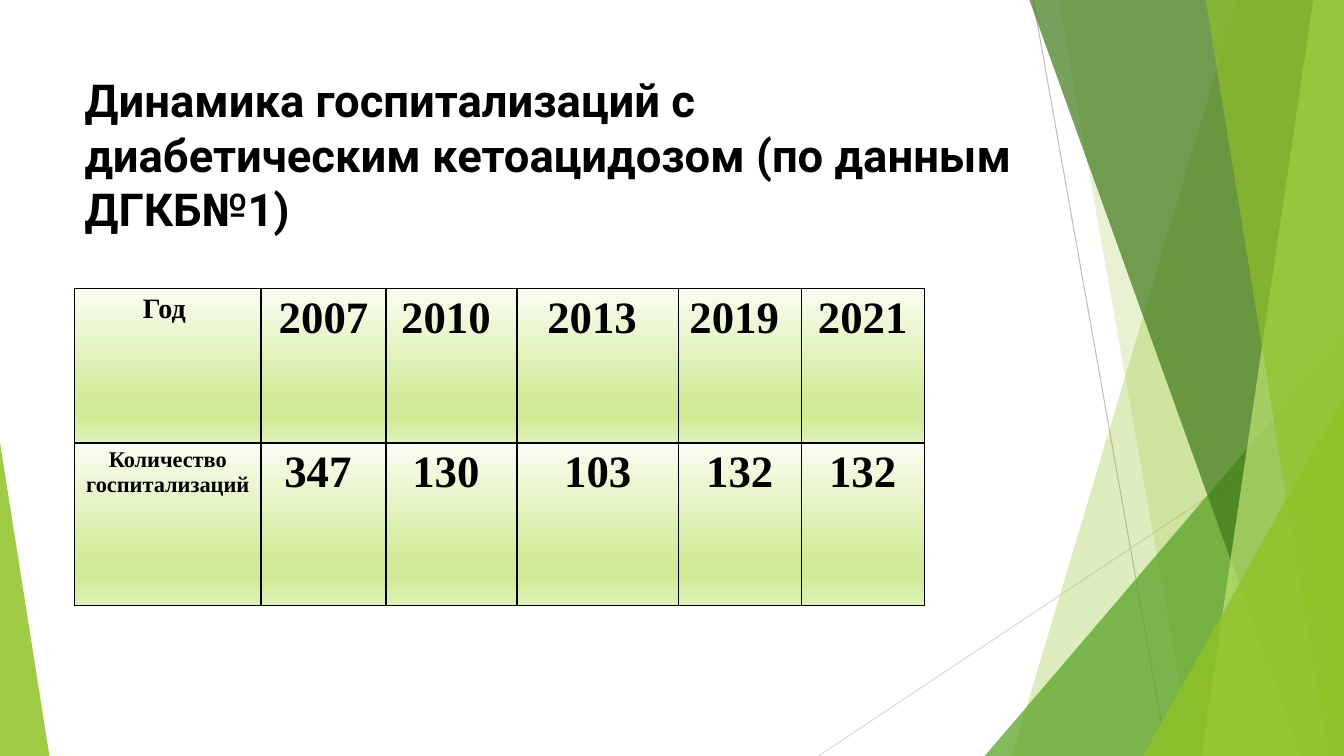
from dataclasses import dataclass

import lxml.etree
import pptx
import pptx.dml.color
import pptx.enum.shapes
import pptx.enum.text
import pptx.oxml
import pptx.oxml.ns
import pptx.util

Pt = pptx.util.Pt
qn = pptx.oxml.ns.qn
WIDTH, HEIGHT = 960, 540


@dataclass
class Ray:
    x1: float
    y1: float
    x2: float
    y2: float
    color: str


@dataclass
class Band:
    top_x: float
    bottom_x: float
    color: str
    opacity: int


@dataclass
class Wedge:
    left: float
    top: float
    width: float
    apex: float
    color: str
    opacity: int


RAYS = [
    Ray(738, 0, 833.8, HEIGHT, "BFBFBF"),
    Ray(WIDTH, 290.2, 584.6, HEIGHT, "D9D9D9"),
]
DECOR = [
    Band(884.2, 722.9, "90C226", 30),
    Band(756, 851.8, "90C226", 20),
    Wedge(703.4, 239.8, 256.6, 1, "54A021", 72),
    Band(735.1, 929.5, "3F7819", 70),
    Band(938.2, 858.2, "C0E474", 70),
    Band(861.1, 949, "90C226", 65),
    Wedge(816.5, 283, 143.5, 1, "90C226", 80),
    Wedge(0, 316.1, 35.3, 0, "90C226", 85),
]
TITLE = "Динамика госпитализаций с диабетическим кетоацидозом (по данным ДГКБ№1)"
ROWS = [
    ["Год ", "2007", "2010 ", "2013 ", "2019 ", "2021"],
    ["Количество госпитализаций ", "347 ", "130 ", "103", "132", "132"],
]
LABEL_SIZES = [20, 16]
VALUE_SIZE = 32
COL_WIDTHS = [133.2, 89.3, 93.6, 115.2, 87.8, 87.8]
ROW_HEIGHTS = [110.2, 115.9]
CELL_STOPS = [(0, "FAFDF3"), (74, "D0EB96"), (83, "D0EB96"), (100, "DFF1B9")]


def rgb(color: str) -> pptx.dml.color.RGBColor:
    return pptx.dml.color.RGBColor.from_string(color)


def fill_shape(sp, color: str, opacity: int) -> None:
    sp.shadow.inherit = False
    sp.line.fill.background()
    sp.fill.solid()
    sp.fill.fore_color.rgb = rgb(color)
    clr = sp._element.spPr.find(qn("a:solidFill"))[0]
    lxml.etree.SubElement(clr, qn("a:alpha"), val=str(opacity * 1000))


def draw_ray(shapes, ray: Ray) -> None:
    cx = shapes.add_connector(
        pptx.enum.shapes.MSO_CONNECTOR.STRAIGHT,
        Pt(ray.x1), Pt(ray.y1), Pt(ray.x2), Pt(ray.y2),
    )
    cx.line.color.rgb = rgb(ray.color)
    cx.line.width = Pt(0.75)
    lxml.etree.SubElement(cx._element.spPr, qn("a:effectLst"))


def draw_band(shapes, band: Band) -> None:
    builder = shapes.build_freeform(Pt(band.top_x), Pt(-0.6), scale=1.0)
    corners = [(WIDTH, -0.6), (WIDTH, HEIGHT), (band.bottom_x, HEIGHT)]
    builder.add_line_segments([(Pt(x), Pt(y)) for x, y in corners], close=True)
    fill_shape(builder.convert_to_shape(), band.color, band.opacity)


def draw_wedge(shapes, wedge: Wedge) -> None:
    sp = shapes.add_shape(
        pptx.enum.shapes.MSO_SHAPE.ISOSCELES_TRIANGLE,
        Pt(wedge.left), Pt(wedge.top), Pt(wedge.width), Pt(HEIGHT - wedge.top),
    )
    sp.adjustments[0] = wedge.apex
    fill_shape(sp, wedge.color, wedge.opacity)


def format_text(p, font: str, size: float, align) -> None:
    p.alignment = align
    for r in p.runs:
        r.font.name = font
        r.font.size = Pt(size)
        r.font.bold = True
        r.font.color.rgb = rgb("000000")


def draw_title(sp) -> None:
    sp.left, sp.top, sp.width, sp.height = Pt(53.3), Pt(48.2), Pt(676.8), Pt(103.7)
    tf = sp.text_frame
    tf.text = TITLE
    tf.word_wrap = True
    tf.auto_size = pptx.enum.text.MSO_AUTO_SIZE.NONE
    tf.vertical_anchor = pptx.enum.text.MSO_ANCHOR.TOP
    format_text(tf.paragraphs[0], "Roboto", 32.4, pptx.enum.text.PP_ALIGN.LEFT)


def style_cell(cell) -> None:
    tc_pr = cell._tc.get_or_add_tcPr()
    for side in ("a:lnL", "a:lnR", "a:lnT", "a:lnB"):
        ln = lxml.etree.SubElement(tc_pr, qn(side), w=str(Pt(1)))
        solid = lxml.etree.SubElement(ln, qn("a:solidFill"))
        lxml.etree.SubElement(solid, qn("a:srgbClr"), val="000000")
    grad = lxml.etree.SubElement(tc_pr, qn("a:gradFill"), rotWithShape="1")
    stops = lxml.etree.SubElement(grad, qn("a:gsLst"))
    for pos, color in CELL_STOPS:
        gs = lxml.etree.SubElement(stops, qn("a:gs"), pos=str(pos * 1000))
        lxml.etree.SubElement(gs, qn("a:srgbClr"), val=color)
    lxml.etree.SubElement(grad, qn("a:lin"), ang="5400000", scaled="0")


def draw_table(shapes) -> None:
    table = shapes.add_table(
        len(ROWS), len(COL_WIDTHS), Pt(53.3), Pt(206.2),
        Pt(sum(COL_WIDTHS)), Pt(sum(ROW_HEIGHTS)),
    ).table
    for col, width in zip(table.columns, COL_WIDTHS):
        col.width = Pt(width)
    for i, texts in enumerate(ROWS):
        table.rows[i].height = Pt(ROW_HEIGHTS[i])
        for j, text in enumerate(texts):
            cell = table.cell(i, j)
            cell.text_frame.text = text
            size = VALUE_SIZE if j else LABEL_SIZES[i]
            format_text(cell.text_frame.paragraphs[0], "Times New Roman", size,
                        pptx.enum.text.PP_ALIGN.CENTER)
            style_cell(cell)


def main() -> None:
    prs = pptx.Presentation()
    prs.slide_width, prs.slide_height = Pt(WIDTH), Pt(HEIGHT)
    s = prs.slides.add_slide(prs.slide_layouts[5])
    for ray in RAYS:
        draw_ray(s.shapes, ray)
    for item in DECOR:
        if isinstance(item, Band):
            draw_band(s.shapes, item)
        else:
            draw_wedge(s.shapes, item)
    draw_title(s.shapes.title)
    draw_table(s.shapes)
    prs.save("out.pptx")


if __name__ == "__main__":
    main()
